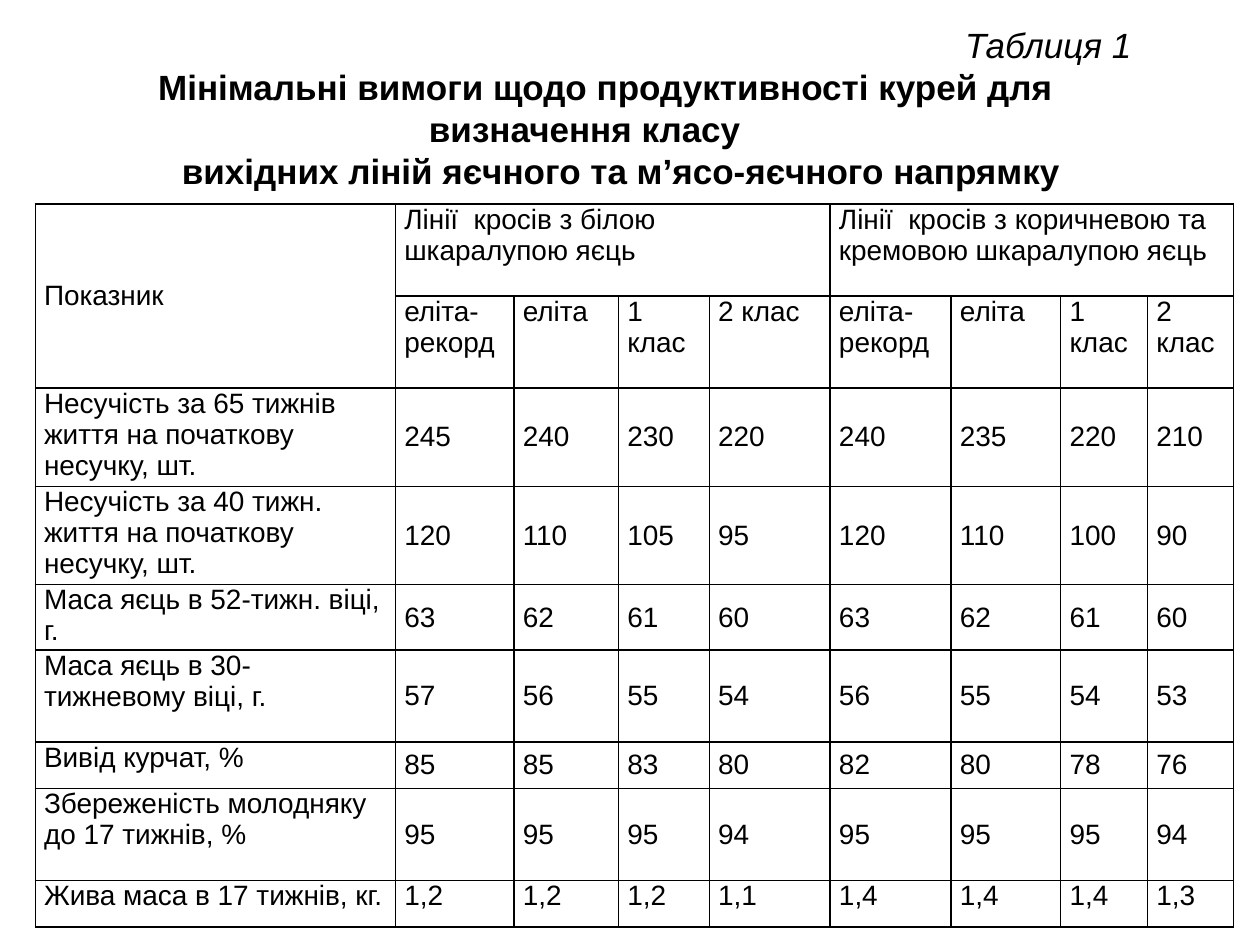
"""Builds a slide with a table of minimum productivity requirements for hens."""
from lxml import etree
from pptx import Presentation
from pptx.dml.color import RGBColor
from pptx.enum import text
from pptx.oxml import ns
from pptx.util import Inches, Pt

BLACK = "000000"


def style_text(paragraph, size, bold=False, italic=False):
    """Format every run of a paragraph."""
    for span in paragraph.runs:
        span.font.name = "Arial"
        span.font.size = Pt(size)
        span.font.bold = bold
        span.font.italic = italic
        span.font.color.rgb = RGBColor.from_string(BLACK)


def add_borders(cell):
    """Draw a thin line on all four sides of a cell."""
    properties = cell._tc.get_or_add_tcPr()
    for side in ("a:lnL", "a:lnR", "a:lnT", "a:lnB"):
        line = etree.SubElement(properties, ns.qn(side), w=str(Pt(1)))
        fill = etree.SubElement(line, ns.qn("a:solidFill"))
        etree.SubElement(fill, ns.qn("a:srgbClr"), val=BLACK)


deck = Presentation()
deck.slide_width, deck.slide_height = Inches(10), Inches(7.5)
page = deck.slides.add_slide(deck.slide_layouts[5])

title = page.shapes.title
title.left, title.top = Inches(0.28), Inches(0.13)
title.width, title.height = Inches(8.8), Inches(1.45)
frame = title.text_frame
frame.word_wrap = True
frame.auto_size = text.MSO_AUTO_SIZE.NONE
frame.vertical_anchor = text.MSO_ANCHOR.MIDDLE
frame.text = "\n".join([
    "Таблиця 1",
    "Мінімальні вимоги щодо продуктивності курей для визначення класу ",
    "вихідних ліній яєчного та м’ясо-яєчного напрямку",
])
for index, (para, indent) in enumerate(zip(frame.paragraphs, (0.25, 0.25, 0.5))):
    caption = index == 0
    para.alignment = text.PP_ALIGN.RIGHT if caption else text.PP_ALIGN.CENTER
    para._p.get_or_add_pPr().set("indent", str(Inches(indent)))
    style_text(para, 20, bold=not caption, italic=caption)

classes = ["еліта-рекорд", "еліта", "1 клас", "2 клас"]
rows = [
    ["Показник", "Лінії  кросів з білою шкаралупою яєць", "", "", "",
     "Лінії  кросів з коричневою та кремовою шкаралупою яєць", "", "", ""],
    ["", *classes, *classes],
    ["Несучість за 65 тижнів життя на початкову несучку, шт.",
     245, 240, 230, 220, 240, 235, 220, 210],
    ["Несучість за 40 тижн. життя на початкову несучку, шт.",
     120, 110, 105, 95, 120, 110, 100, 90],
    ["Маса яєць в 52-тижн. віці, г.", 63, 62, 61, 60, 63, 62, 61, 60],
    ["Маса яєць в 30-тижневому віці, г.", 57, 56, 55, 54, 56, 55, 54, 53],
    ["Вивід курчат, %", 85, 85, 83, 80, 82, 80, 78, 76],
    ["Збереженість молодняку до 17 тижнів, %", 95, 95, 95, 94, 95, 95, 95, 94],
    ["Жива маса в 17 тижнів, кг.",
     "1,2", "1,2", "1,2", "1,1", "1,4", "1,4", "1,4", "1,3"],
]
widths = [2.86, 0.94, 0.83, 0.72, 0.96, 0.96, 0.87, 0.69, 0.68]
heights = [0.73, 0.73, 0.78, 0.78, 0.52, 0.73, 0.37, 0.73, 0.37]

table = page.shapes.add_table(len(rows), len(widths), Inches(0.28), Inches(1.62),
                              Inches(sum(widths)), Inches(sum(heights))).table
table.first_row = table.horz_banding = False
for column, width in zip(table.columns, widths):
    column.width = Inches(width)
for row, height in zip(table.rows, heights):
    row.height = Inches(height)

for r, values in enumerate(rows):
    for c, value in enumerate(values):
        cell = table.cell(r, c)
        cell.text = str(value)
        cell.margin_left = cell.margin_right = Inches(0.07)
        cell.margin_top = cell.margin_bottom = 0
        middle = (r, c) == (0, 0) or (c > 0 and 2 <= r < len(rows) - 1)
        cell.vertical_anchor = text.MSO_ANCHOR.MIDDLE if middle else text.MSO_ANCHOR.TOP
        add_borders(cell)
        cell.fill.background()
        style_text(cell.text_frame.paragraphs[0], 16)

table.cell(0, 0).merge(table.cell(1, 0))
for first in (1, 5):
    table.cell(0, first).merge(table.cell(0, first + 3))

deck.save("out.pptx")
